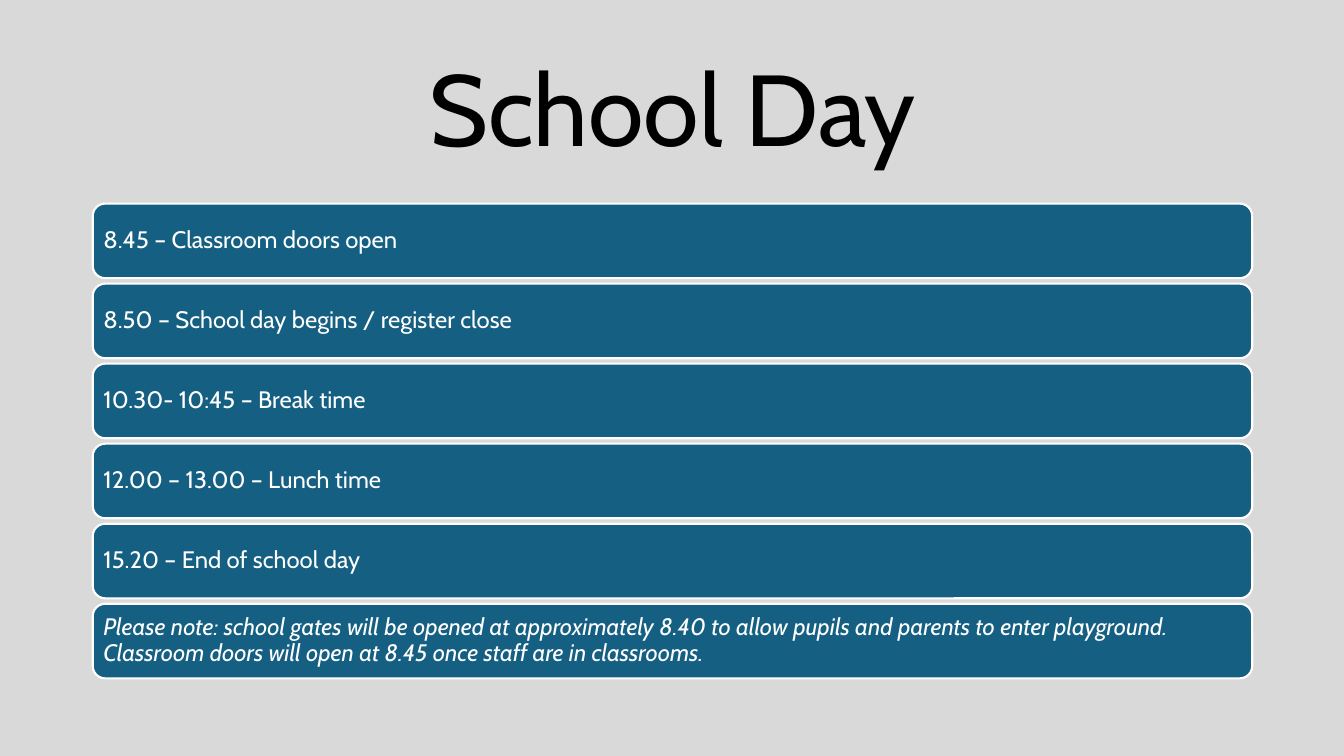
"""Build the School Day timetable slide."""
from dataclasses import dataclass

from pptx import Presentation
from pptx.dml.color import RGBColor
from pptx.enum.shapes import MSO_SHAPE
from pptx.enum.text import MSO_ANCHOR, PP_ALIGN
from pptx.slide import Slide
from pptx.text.text import TextFrame
from pptx.util import Inches, Pt

BACKGROUND = RGBColor(0xD9, 0xD9, 0xD9)
BLACK = RGBColor(0x00, 0x00, 0x00)
WHITE = RGBColor(0xFF, 0xFF, 0xFF)
BLUE = RGBColor(0x15, 0x60, 0x82)
FONT = "Cabin"

LEFT, WIDTH = 0.92, 11.5
FIRST_TOP, LAST_TOP, BAR_HEIGHT = 2.02, 5.99, 0.74
BAR_INSET = 0.07


@dataclass(frozen=True)
class Entry:
    text: str
    italic: bool = False


ENTRIES = [
    Entry("8.45 – Classroom doors open"),
    Entry("8.50 – School day begins / register close"),
    Entry("10.30- 10:45 – Break time"),
    Entry("12.00 – 13.00 – Lunch time"),
    Entry("15.20 – End of school day"),
    Entry(
        "Please note: school gates will be opened at approximately 8.40 to allow "
        "pupils and parents to enter playground. Classroom doors will open at 8.45 "
        "once staff are in classrooms.",
        italic=True,
    ),
]


def write_text(frame: TextFrame, text: str, size: float, color: RGBColor,
               alignment: PP_ALIGN, italic: bool = False) -> None:
    frame.text = text
    frame.word_wrap = True
    frame.vertical_anchor = MSO_ANCHOR.MIDDLE
    paragraph = frame.paragraphs[0]
    paragraph.alignment = alignment
    paragraph.line_spacing = 0.9
    font = paragraph.runs[0].font
    font.name = FONT
    font.size = Pt(size)
    font.italic = italic
    font.color.rgb = color


def add_title(slide: Slide, text: str) -> None:
    title = slide.shapes.add_textbox(Inches(LEFT), Inches(0.4), Inches(WIDTH), Inches(1.45))
    write_text(title.text_frame, text, 72, BLACK, PP_ALIGN.CENTER)


def add_bar(slide: Slide, entry: Entry, top: float) -> None:
    bar = slide.shapes.add_shape(MSO_SHAPE.ROUNDED_RECTANGLE, Inches(LEFT), Inches(top),
                                 Inches(WIDTH), Inches(BAR_HEIGHT))
    bar.shadow.inherit = False
    bar.fill.solid()
    bar.fill.fore_color.rgb = BLUE
    bar.line.color.rgb = WHITE
    bar.line.width = Pt(1.5)
    frame = bar.text_frame
    frame.margin_left = frame.margin_right = Inches(BAR_INSET)
    frame.margin_top = frame.margin_bottom = Inches(BAR_INSET)
    write_text(frame, entry.text, 17, WHITE, PP_ALIGN.LEFT, entry.italic)


def main() -> None:
    presentation = Presentation()
    presentation.slide_width = Inches(13.33)
    presentation.slide_height = Inches(7.5)
    slide = presentation.slides.add_slide(presentation.slide_layouts[6])
    slide.background.fill.solid()
    slide.background.fill.fore_color.rgb = BACKGROUND

    add_title(slide, "School Day")
    pitch = (LAST_TOP - FIRST_TOP) / (len(ENTRIES) - 1)
    for index, entry in enumerate(ENTRIES):
        add_bar(slide, entry, FIRST_TOP + index * pitch)

    presentation.save("out.pptx")


if __name__ == "__main__":
    main()
